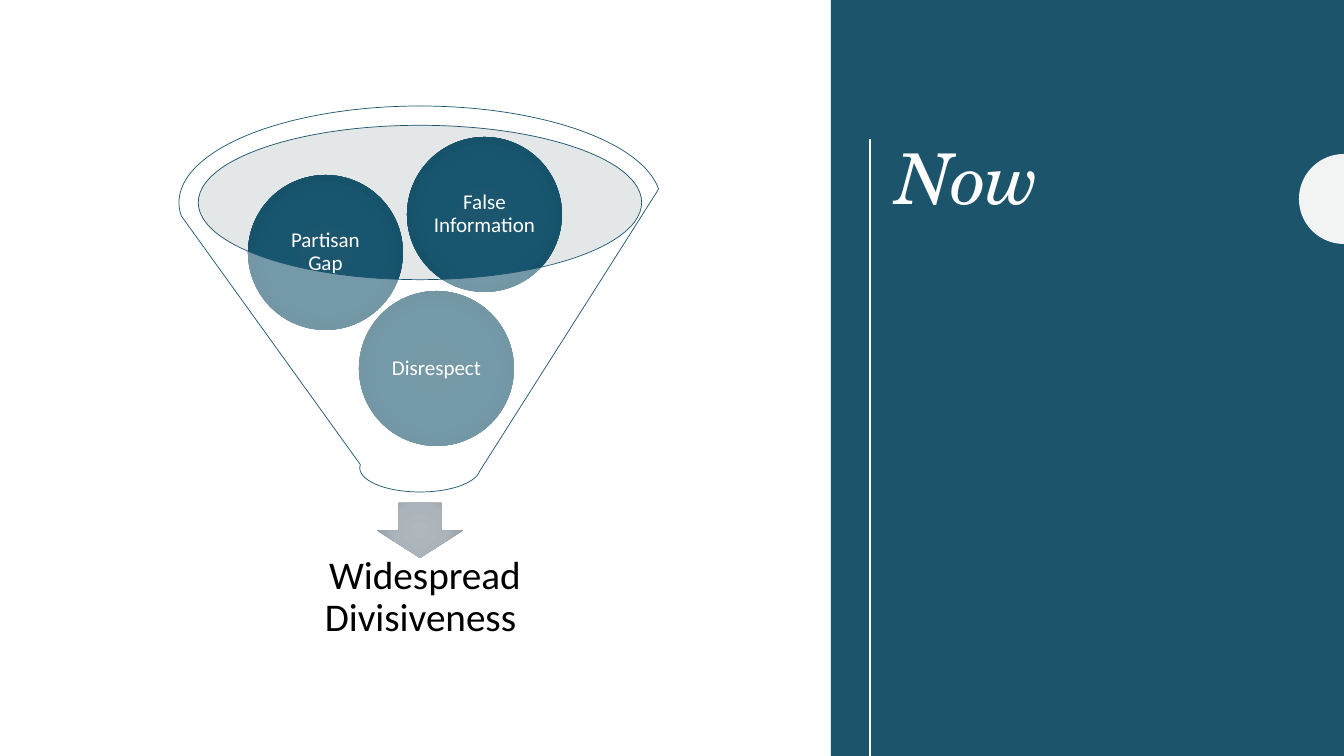
import dataclasses
import math

import lxml.etree
import pptx
import pptx.dml.color
import pptx.enum.shapes
import pptx.enum.text
import pptx.oxml
import pptx.oxml.ns
import pptx.util

EMU_PER_PX = 914400 / 100.8
SHAPE = pptx.enum.shapes.MSO_SHAPE
ALIGN = pptx.enum.text.PP_ALIGN
ANCHOR = pptx.enum.text.MSO_ANCHOR


@dataclasses.dataclass(frozen=True)
class Theme:
    teal: str = "1C546B"
    white: str = "FFFFFF"
    black: str = "000000"
    pale: str = "F2F3F3"
    rim: str = "BDC3C7"
    ball: tuple[str, ...] = ("1B566E", "18566F", "114A61")
    arrow: tuple[str, ...] = ("B0B7BD", "ABB4BA", "90989F")
    body_font: str = "Calibri"
    title_font: str = "TeX Gyre Schola"
    title_size: int = 50
    result_size: int = 28
    ball_size: int = 15


@dataclasses.dataclass(frozen=True)
class Box:
    left: int
    top: int
    width: int
    height: int

    def emu(self) -> list[pptx.util.Emu]:
        return [px(side) for side in dataclasses.astuple(self)]


@dataclasses.dataclass(frozen=True)
class Ball:
    text: str
    left: int
    top: int


THEME = Theme()
PAGE_WIDTH, PAGE_HEIGHT = 1344, 756
BALL_DIAMETER = 155
BALLS = (
    Ball("Disrespect", 359, 291),
    Ball("Partisan Gap", 248, 175),
    Ball("False Information", 407, 137),
)


def px(length: float) -> pptx.util.Emu:
    return pptx.util.Emu(round(length * EMU_PER_PX))


def rgb(colour: str) -> pptx.dml.color.RGBColor:
    return pptx.dml.color.RGBColor.from_string(colour)


def paint(shape, colour: str, opacity: int = 100) -> None:
    """Give a shape a plain fill with no outline or shadow."""
    shape.shadow.inherit = False
    shape.line.fill.background()
    shape.fill.solid()
    shape.fill.fore_color.rgb = rgb(colour)
    if opacity < 100:
        colour_node = next(shape._element.spPr.iter(pptx.oxml.ns.qn("a:srgbClr")))
        alpha = lxml.etree.SubElement(colour_node, pptx.oxml.ns.qn("a:alpha"))
        alpha.set("val", str(opacity * 1000))


def paint_radial(shape, colours: tuple[str, ...]) -> None:
    """Give a shape a circular gradient with evenly spaced stops."""
    paint(shape, colours[0])
    stops = "".join(
        f'<a:gs pos="{index * 100000 // (len(colours) - 1)}"><a:srgbClr val="{colour}"/></a:gs>'
        for index, colour in enumerate(colours)
    )
    gradient = pptx.oxml.parse_xml(
        f'<a:gradFill {pptx.oxml.ns.nsdecls("a")}><a:gsLst>{stops}</a:gsLst>'
        '<a:path path="circle"><a:fillToRect l="100000" t="100000" r="100000" b="100000"/>'
        "</a:path></a:gradFill>"
    )
    properties = shape._element.spPr
    properties.replace(properties.find(pptx.oxml.ns.qn("a:solidFill")), gradient)


def write(shape, text: str, font: str, size: int, colour: str, inset: int,
          align=ALIGN.CENTER, anchor=ANCHOR.MIDDLE, italic: bool = False) -> None:
    frame = shape.text_frame
    frame.word_wrap = True
    frame.vertical_anchor = anchor
    frame.margin_left = frame.margin_right = px(inset)
    frame.margin_top = frame.margin_bottom = px(inset if anchor == ANCHOR.MIDDLE else inset // 2)
    para = frame.paragraphs[0]
    para.text = text
    para.alignment = align
    para.line_spacing = 0.9
    para.font.name = font
    para.font.size = pptx.util.Pt(size)
    para.font.italic = italic
    para.font.color.rgb = rgb(colour)


def add_half_disc(page, centre_x: int, centre_y: int, radius: int) -> None:
    """Draw the left half of a disc."""
    angles = [math.radians(degree) for degree in range(90, 271, 5)]
    points = [
        (px(centre_x + radius * math.cos(angle)), px(centre_y + radius * math.sin(angle)))
        for angle in angles
    ]
    builder = page.shapes.build_freeform(*points[0])
    builder.add_line_segments(points[1:], close=True)
    paint(builder.convert_to_shape(), THEME.pale)


def add_title_panel(page) -> None:
    panel = page.shapes.add_shape(SHAPE.RECTANGLE, *Box(831, 0, 513, PAGE_HEIGHT).emu())
    paint(panel, THEME.teal)
    add_half_disc(page, PAGE_WIDTH, 199, 45)

    rule = page.shapes.add_connector(
        pptx.enum.shapes.MSO_CONNECTOR.STRAIGHT, px(870), px(139), px(870), px(PAGE_HEIGHT)
    )
    rule.line.color.rgb = rgb(THEME.white)
    rule.line.width = pptx.util.Pt(2)
    lxml.etree.SubElement(rule._element.spPr, pptx.oxml.ns.qn("a:effectLst"))

    title = page.shapes.add_textbox(*Box(887, 139, 386, 469).emu())
    write(title, "Now", THEME.title_font, THEME.title_size, THEME.white, 10,
          ALIGN.LEFT, ANCHOR.TOP, italic=True)


def add_funnel_diagram(page) -> None:
    # Mouth of the funnel, outlet arrow and result
    mouth = page.shapes.add_shape(SHAPE.OVAL, *Box(198, 125, 444, 154).emu())
    paint(mouth, THEME.rim, opacity=40)
    arrow = page.shapes.add_shape(SHAPE.DOWN_ARROW, *Box(377, 503, 86, 55).emu())
    paint_radial(arrow, THEME.arrow)
    result = page.shapes.add_textbox(*Box(214, 546, 413, 103).emu())
    write(result, " Widespread Divisiveness", THEME.body_font, THEME.result_size, THEME.black, 17)

    # Balls falling in
    for ball in BALLS:
        box = Box(ball.left, ball.top, BALL_DIAMETER, BALL_DIAMETER)
        disc = page.shapes.add_shape(SHAPE.OVAL, *box.emu())
        paint_radial(disc, THEME.ball)
        write(disc, ball.text, THEME.body_font, THEME.ball_size, THEME.white, 2)

    # Translucent funnel in front
    funnel = page.shapes.add_shape(SHAPE.FUNNEL, *Box(179, 106, 482, 386).emu())
    paint(funnel, THEME.white, opacity=40)
    funnel.line.color.rgb = rgb(THEME.teal)
    funnel.line.width = pptx.util.Pt(0.5)


def main() -> None:
    deck = pptx.Presentation()
    deck.slide_width, deck.slide_height = px(PAGE_WIDTH), px(PAGE_HEIGHT)
    page = deck.slides.add_slide(deck.slide_layouts[6])
    add_title_panel(page)
    add_funnel_diagram(page)
    deck.save("out.pptx")


if __name__ == "__main__":
    main()
